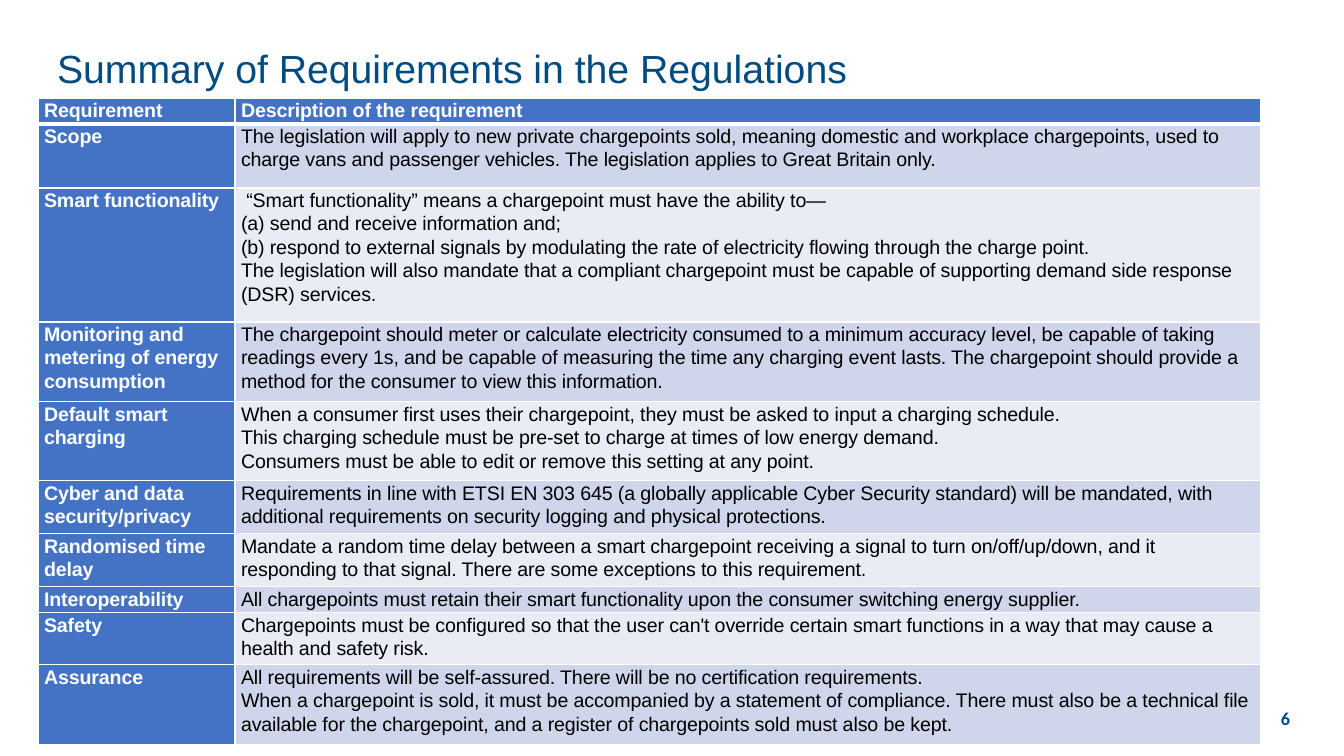
"""Build the slide summarising the requirements in the chargepoint regulations."""
from dataclasses import dataclass

from lxml.etree import SubElement
from pptx import Presentation
from pptx.dml.color import RGBColor
from pptx.enum.text import MSO_ANCHOR, MSO_AUTO_SIZE, PP_ALIGN
from pptx.oxml.ns import qn
from pptx.util import Emu, Pt

COLORS = {
    "navy": "004B81",
    "blue": "4472C4",
    "band_dark": "CFD5EA",
    "band_light": "E9EBF5",
    "white": "FFFFFF",
    "black": "000000",
}
COLUMN_WIDTHS = (197, 1026)


@dataclass(frozen=True)
class Requirement:
    name: str
    description: tuple[str, ...]
    height: int


@dataclass(frozen=True)
class TextStyle:
    size: int
    color: str
    bold: bool = False
    font: str = "Arial"
    tracking: int = 0


REQUIREMENTS = (
    Requirement("Requirement", ("Description of the requirement",), 26),
    Requirement("Scope", (
        "The legislation will apply to new private chargepoints sold, meaning domestic and workplace "
        "chargepoints, used to charge vans and passenger vehicles. The legislation applies to Great "
        "Britain only.",), 64),
    Requirement("Smart functionality", (
        " “Smart functionality” means a chargepoint must have the ability to—",
        "(a) send and receive information and;",
        "(b) respond to external signals by modulating the rate of electricity flowing through the "
        "charge point.",
        "The legislation will also mandate that a compliant chargepoint must be capable of supporting "
        "demand side response (DSR) services."), 134),
    Requirement("Monitoring and metering of energy consumption", (
        "The chargepoint should meter or calculate electricity consumed to a minimum accuracy level, "
        "be capable of taking readings every 1s, and be capable of measuring the time any charging "
        "event lasts. The chargepoint should provide a method for the consumer to view this "
        "information.",), 80),
    Requirement("Default smart charging", (
        "When a consumer first uses their chargepoint, they must be asked to input a charging schedule.",
        "This charging schedule must be pre-set to charge at times of low energy demand.",
        "Consumers must be able to edit or remove this setting at any point."), 79),
    Requirement("Cyber and data security/privacy", (
        "Requirements in line with ETSI EN 303 645 (a globally applicable Cyber Security standard) "
        "will be mandated, with additional requirements on security logging and physical "
        "protections.",), 53),
    Requirement("Randomised time delay", (
        "Mandate a random time delay between a smart chargepoint receiving a signal to turn "
        "on/off/up/down, and it responding to that signal. There are some exceptions to this "
        "requirement.",), 53),
    Requirement("Interoperability", (
        "All chargepoints must retain their smart functionality upon the consumer switching energy "
        "supplier.",), 26),
    Requirement("Safety", (
        "Chargepoints must be configured so that the user can't override certain smart functions in a "
        "way that may cause a health and safety risk.",), 52),
    Requirement("Assurance", (
        "All requirements will be self-assured. There will be no certification requirements.",
        "When a chargepoint is sold, it must be accompanied by a statement of compliance. There must "
        "also be a technical file available for the chargepoint, and a register of chargepoints sold "
        "must also be kept."), 80),
)
TITLE_STYLE = TextStyle(28, "navy")
NUMBER_STYLE = TextStyle(13, "navy", bold=True, font="Calibri")
HEADING_STYLE = TextStyle(14, "white", bold=True, tracking=-10)
BODY_STYLE = TextStyle(14, "black", tracking=-10)


def px(length: int) -> Emu:
    """Turn slide pixels into EMU."""
    return Emu(round(length * 914400 / 100.8))


def write(frame, lines: tuple[str, ...], style: TextStyle, spacing: float = 1.0,
          align: PP_ALIGN = PP_ALIGN.LEFT) -> None:
    """Write each line as a paragraph with one styled run."""
    frame.word_wrap = True
    for index, line in enumerate(lines):
        paragraph = frame.paragraphs[0] if index == 0 else frame.add_paragraph()
        paragraph.alignment = align
        paragraph.line_spacing = spacing
        run = paragraph.add_run()
        run.text = line
        run.font.name = style.font
        run.font.size = Pt(style.size)
        run.font.bold = style.bold
        run.font.color.rgb = RGBColor.from_string(COLORS[style.color])
        if style.tracking:
            run.font._element.set("spc", str(style.tracking))


def add_borders(cell, top: int, bottom: int) -> None:
    """Give a cell white borders, with top and bottom widths in points."""
    properties = cell._tc.get_or_add_tcPr()
    for tag, width in (("a:lnL", 1), ("a:lnR", 1), ("a:lnT", top), ("a:lnB", bottom)):
        border = SubElement(properties, qn(tag), w=str(Pt(width)))
        fill = SubElement(border, qn("a:solidFill"))
        SubElement(fill, qn("a:srgbClr"), val=COLORS["white"])


def fill_cell(cell, lines: tuple[str, ...], style: TextStyle, fill: str, row: int) -> None:
    """Set the borders, fill, margins and text of a table cell."""
    add_borders(cell, top=3 if row == 1 else 1, bottom=3 if row == 0 else 1)
    cell.fill.solid()
    cell.fill.fore_color.rgb = RGBColor.from_string(COLORS[fill])
    cell.margin_left = cell.margin_right = px(6)
    cell.margin_top = cell.margin_bottom = 0
    write(cell.text_frame, lines, style, spacing=1.07)


def add_requirements(slide) -> None:
    """Add the table of requirements."""
    table = slide.shapes.add_table(
        len(REQUIREMENTS), len(COLUMN_WIDTHS), px(38), px(98), px(sum(COLUMN_WIDTHS)),
        px(sum(requirement.height for requirement in REQUIREMENTS))).table
    for column, width in zip(table.columns, COLUMN_WIDTHS):
        column.width = px(width)
    for row, requirement in enumerate(REQUIREMENTS):
        table.rows[row].height = px(requirement.height)
        fill_cell(table.cell(row, 0), (requirement.name,), HEADING_STYLE, "blue", row)
        band = "band_dark" if row % 2 else "band_light"
        style, fill = (BODY_STYLE, band) if row else (HEADING_STYLE, "blue")
        fill_cell(table.cell(row, 1), requirement.description, style, fill, row)


def main() -> None:
    """Build and save the slide."""
    presentation = Presentation()
    presentation.slide_width, presentation.slide_height = px(1344), px(756)
    slide = presentation.slides.add_slide(presentation.slide_layouts[5])

    title = slide.shapes.title
    title.left, title.top, title.width, title.height = px(47), px(37), px(1252), px(68)
    title.text_frame.auto_size = MSO_AUTO_SIZE.NONE
    title.text_frame.vertical_anchor = MSO_ANCHOR.MIDDLE
    write(title.text_frame, ("Summary of Requirements in the Regulations",), TITLE_STYLE, spacing=0.9)

    page_number = slide.shapes.add_textbox(px(1218), px(698), px(82), px(40))
    page_number.text_frame.vertical_anchor = MSO_ANCHOR.MIDDLE
    write(page_number.text_frame, ("6",), NUMBER_STYLE, align=PP_ALIGN.RIGHT)

    add_requirements(slide)
    presentation.save("out.pptx")


if __name__ == "__main__":
    main()
